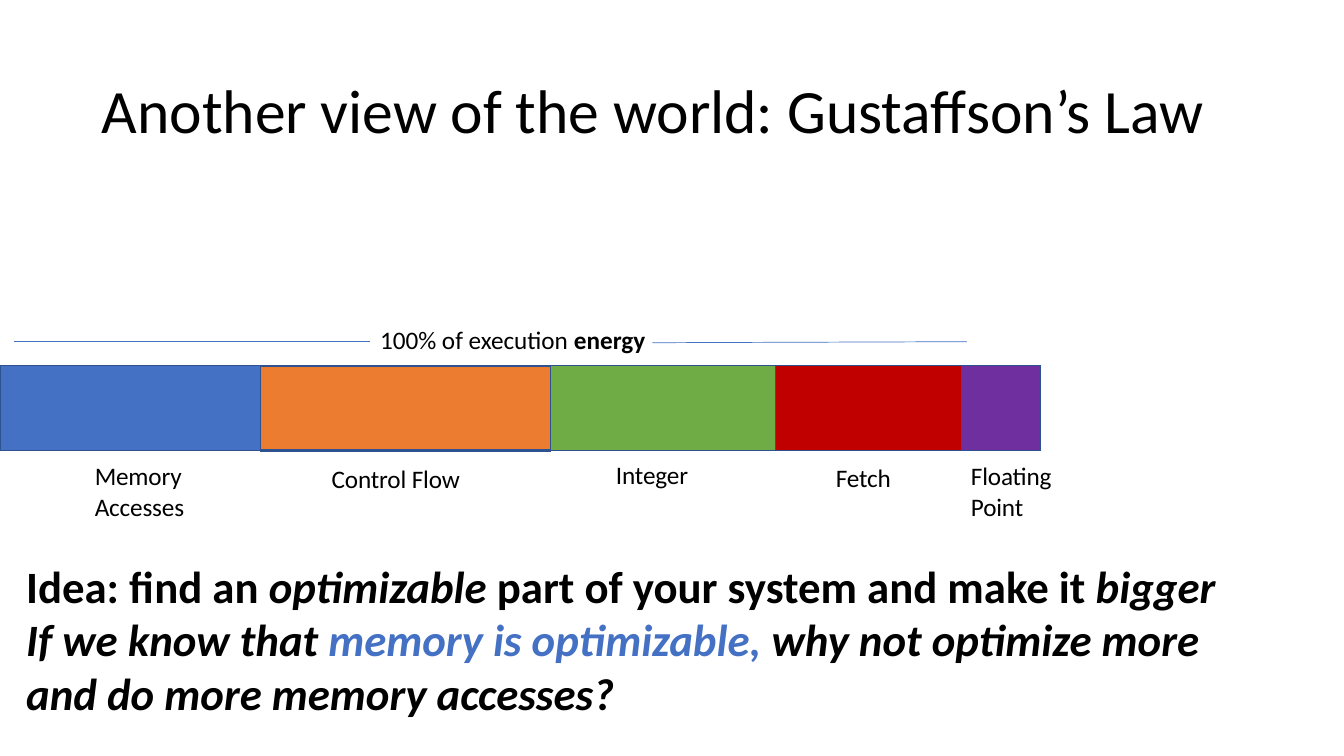
from lxml import etree
from pptx import Presentation
from pptx.dml.color import RGBColor
from pptx.enum.shapes import MSO_CONNECTOR
from pptx.enum.text import MSO_ANCHOR, PP_ALIGN
from pptx.oxml.ns import qn
from pptx.util import Inches, Pt

STRAIGHT = MSO_CONNECTOR.STRAIGHT
TOP = MSO_ANCHOR.TOP
LEFT = PP_ALIGN.LEFT
TITLE_ONLY = 5

FONT = "Calibri"
BLACK, BLUE, BORDER = "000000", "4471C4", "2E528F"

# Name, fill, width, label offset from the segment's left, label drop, label width
SEGMENTS = [
    ("Memory Accesses", BLUE, 2.58, 0.93, 0.09, 0.95),
    ("Control Flow", "EC7C30", 2.88, 0.70, 0.12, 1.32),
    ("Integer", "6FAC46", 2.23, 0.64, 0.08, 0.76),
    ("Fetch", "C00000", 1.85, 0.59, 0.11, 0.58),
    ("Floating Point", "6F2F9F", 0.78, 0.08, 0.09, 0.84),
]


def color(value):
    return RGBColor.from_string(value)


def write_text(frame, runs, size, spacing=0, wrap=True, top=0.01, left=0.01):
    """Fill a text frame with (text, format) runs in one paragraph."""
    frame.word_wrap = wrap
    frame.vertical_anchor = TOP
    frame.margin_left, frame.margin_top = Inches(left), Inches(top)
    frame.margin_right = frame.margin_bottom = 0
    paragraph = frame.paragraphs[0]
    paragraph.alignment = LEFT
    paragraph.space_before = Pt(1)
    for text, style in runs:
        run = paragraph.add_run()
        run.text = text
        run.font.name = FONT
        run.font.size = Pt(size)
        run.font.bold = style.get("bold", False)
        run.font.italic = style.get("italic", False)
        run.font.color.rgb = color(style.get("color", BLACK))
        if spacing:
            run.font._element.set("spc", str(round(spacing * 100)))


def add_text(slide, box, runs, size, **options):
    shape = slide.shapes.add_textbox(*map(Inches, box))
    write_text(shape.text_frame, runs, size, **options)


def add_rule(slide, x1, y1, x2, y2):
    line = slide.shapes.add_connector(STRAIGHT, *map(Inches, (x1, y1, x2, y2)))
    line.line.color.rgb = color(BLUE)
    line.line.width = Pt(0.5)
    etree.SubElement(line._element.spPr, qn("a:effectLst"))


def set_borders(cell, widths):
    """Draw left, right, top and bottom borders, which precede the cell fill."""
    properties = cell._tc.get_or_add_tcPr()
    for index, (side, width) in enumerate(zip("LRTB", widths)):
        line = etree.Element(qn(f"a:ln{side}"), w=str(Pt(width)))
        fill = etree.SubElement(line, qn("a:solidFill"))
        etree.SubElement(fill, qn("a:srgbClr"), val=BORDER)
        properties.insert(index, line)


def add_title(slide, box):
    title = slide.shapes.title
    title.left, title.top, title.width, title.height = map(Inches, box)
    runs = [("Another view of the world: Gustaffson’s Law", {})]
    write_text(title.text_frame, runs, 44, spacing=-0.05, top=0.44, left=0.75)


def add_energy_heading(slide, box):
    left, top, width, height = box
    middle = top + 0.18
    add_rule(slide, left, middle, left + 3.53, middle)
    add_rule(slide, left + 6.33, middle + 0.01, left + width, middle)
    runs = [("100% of execution ", {}), ("energy", {"bold": True})]
    add_text(slide, (left + 3.62, top, 2.67, height), runs, 18, wrap=False)


def add_energy_bar(slide, box):
    left, top, width, height = box
    frame = slide.shapes.add_table(1, len(SEGMENTS), *map(Inches, box))
    table = frame.table
    table.first_row = table.horz_banding = False
    table.rows[0].height = Inches(height)
    for index, (name, fill, span, offset, drop, label_width) in enumerate(SEGMENTS):
        table.columns[index].width = Inches(span)
        cell = table.cell(0, index)
        cell.fill.solid()
        cell.fill.fore_color.rgb = color(fill)
        edge = 2.25 if name == "Control Flow" else 1
        set_borders(cell, (1, 1, edge, edge))

        # Label below the segment; two-word names in narrow boxes wrap
        wraps = label_width < 1 and " " in name
        label_box = (left + offset, top + height + drop, label_width,
                     0.63 if wraps else 0.33)
        add_text(slide, label_box, [(name, {})], 18, spacing=-0.1, wrap=wraps)
        left += span


def add_idea(slide, box):
    strong = {"bold": True}
    slanted = {"bold": True, "italic": True}
    runs = [
        ("Idea: find an ", strong),
        ("optimizable ", slanted),
        ("part of your system and make it ", strong),
        ("bigger If we know that ", slanted),
        ("memory is optimizable, ", {**slanted, "color": BLUE}),
        ("why not optimize more and do more memory accesses?", slanted),
    ]
    add_text(slide, box, runs, 32, spacing=-0.03)


def main():
    presentation = Presentation()
    presentation.slide_width = Inches(13.33)
    presentation.slide_height = Inches(7.5)
    slide = presentation.slides.add_slide(presentation.slide_layouts[TITLE_ONLY])
    add_title(slide, (0.26, 0.27, 12.59, 1.49))
    add_energy_heading(slide, (0.14, 3.21, 9.45, 0.33))
    add_energy_bar(slide, (0, 3.63, 10.32, 0.84))
    add_idea(slide, (0.25, 5.53, 11.83, 1.63))
    presentation.save("out.pptx")


if __name__ == "__main__":
    main()
